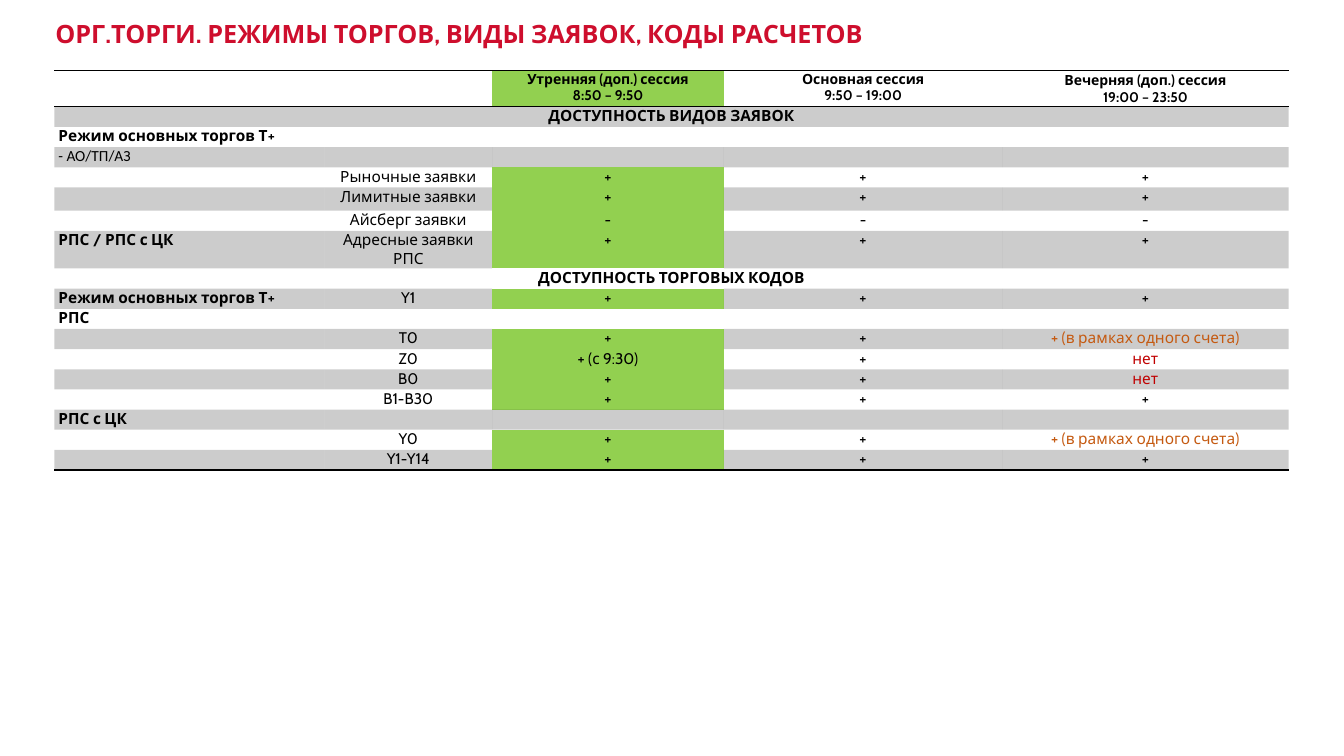
from lxml import etree
from pptx import Presentation
from pptx.dml.color import RGBColor
from pptx.enum.text import MSO_ANCHOR, MSO_AUTO_SIZE, PP_ALIGN
from pptx.oxml.ns import qn
from pptx.util import Inches, Pt

LEFT, CENTER = PP_ALIGN.LEFT, PP_ALIGN.CENTER
TOP, MIDDLE = MSO_ANCHOR.TOP, MSO_ANCHOR.MIDDLE
NO_AUTOFIT = MSO_AUTO_SIZE.NONE
TITLE_ONLY = 5
NO_STYLE = "{2D5ABB26-0587-4C30-8999-92F81FD0307C}"

BLACK = RGBColor(0x00, 0x00, 0x00)
CRIMSON = RGBColor(0xCE, 0x0E, 0x2D)
GREEN = RGBColor(0x92, 0xD0, 0x50)
ORANGE = RGBColor(0xC5, 0x5A, 0x11)
RED = RGBColor(0xC0, 0x00, 0x00)

COLUMN_WIDTHS = (2.68, 1.66, 2.3, 2.76, 2.84)
ROW_HEIGHT = 0.2
SPECIAL_HEIGHTS = {0: 0.36, 5: 0.23, 7: 0.36}
MORNING = 2
SAME_ACCOUNT = "+ (в рамках одного счета)"
TEXT_COLORS = {SAME_ACCOUNT: ORANGE, "нет": RED}
SECTIONS = ("ДОСТУПНОСТЬ ВИДОВ ЗАЯВОК", "ДОСТУПНОСТЬ ТОРГОВЫХ КОДОВ")
SUBMODE = "- АО/ТП/АЗ"
ROWS = (
    ("", "", "Утренняя (доп.) сессия\n8:50 – 9:50",
     "Основная сессия\n9:50 – 19:00", "Вечерняя (доп.) сессия\n19:00 – 23:50"),
    (SECTIONS[0], "", "", "", ""),
    ("Режим основных торгов Т+", "", "", "", ""),
    (SUBMODE, "", "", "", ""),
    ("", "Рыночные заявки", "+", "+", "+"),
    ("", "Лимитные заявки", "+", "+", "+"),
    ("", "Айсберг заявки", "-", "-", "-"),
    ("РПС / РПС с ЦК", "Адресные заявки РПС", "+", "+", "+"),
    (SECTIONS[1], "", "", "", ""),
    ("Режим основных торгов Т+", "Y1", "+", "+", "+"),
    ("РПС", "", "", "", ""),
    ("", "T0", "+", "+", SAME_ACCOUNT),
    ("", "Z0", "+ (с 9:30)", "+", "нет"),
    ("", "B0", "+", "+", "нет"),
    ("", "B1-B30", "+", "+", "+"),
    ("РПС с ЦК", "", "", "", ""),
    ("", "Y0", "+", "+", SAME_ACCOUNT),
    ("", "Y1-Y14", "+", "+", "+"),
)


def write_text(frame, text, size=11, font="Cabin", color=BLACK, bold=False, align=LEFT):
    """Write the lines of text as formatted paragraphs."""
    for index, line in enumerate(text.split("\n")):
        paragraph = frame.add_paragraph() if index else frame.paragraphs[0]
        paragraph.alignment = align
        if line:
            run = paragraph.add_run()
            run.text = line
            run.font.size, run.font.name = Pt(size), font
            run.font.bold = bold
            run.font.color.rgb = color
        else:
            etree.SubElement(paragraph._p, qn("a:endParaRPr"), sz=str(size * 100))


def add_title(slide, text):
    """Place and format the slide title."""
    title = slide.shapes.title
    title.left, title.top = Inches(0.54), Inches(0.2)
    title.width, title.height = Inches(11.93), Inches(0.28)
    frame = title.text_frame
    frame.margin_left = frame.margin_right = frame.margin_top = frame.margin_bottom = 0
    frame.vertical_anchor = TOP
    frame.auto_size = NO_AUTOFIT
    frame.word_wrap = True
    write_text(frame, text, size=18, color=CRIMSON, bold=True)
    paragraph = frame.paragraphs[0]
    paragraph.line_spacing, paragraph.space_before = Pt(20), Pt(1)
    paragraph._p.get_or_add_pPr().set("marL", str(Inches(0.01)))


def add_border(cell, side):
    """Draw a thin black line on one side of a cell."""
    properties = cell._tc.get_or_add_tcPr()
    line = etree.SubElement(properties, qn(f"a:ln{side}"), w=str(Pt(1)))
    fill = etree.SubElement(line, qn("a:solidFill"))
    etree.SubElement(fill, qn("a:srgbClr"), val=str(BLACK))


def fill_cell(cell, shaded, highlighted):
    """Give a cell the session green, the band grey or no fill."""
    if not (shaded or highlighted):
        cell.fill.background()
        return
    cell.fill.solid()
    cell.fill.fore_color.rgb = GREEN if highlighted else BLACK
    if not highlighted:
        color = cell._tc.tcPr.find(qn("a:solidFill")).find(qn("a:srgbClr"))
        etree.SubElement(color, qn("a:alpha"), val="20000")


def format_cell(cell, text, row, column):
    """Write one table cell with its borders, fill and text."""
    cell.margin_left = cell.margin_right = Inches(0.04)
    cell.margin_top = cell.margin_bottom = 0
    cell.vertical_anchor = MIDDLE if (row, column) == (0, 4) else TOP
    if row == 0:
        add_border(cell, "T")
    if row in (0, len(ROWS) - 1):
        add_border(cell, "B")
    fill_cell(cell, row % 2 == 1, column == MORNING and text != "")
    write_text(
        cell.text_frame,
        text,
        size=10 if row == 0 else 11,
        font="Calibri" if text == SUBMODE else "Cabin",
        color=TEXT_COLORS.get(text, BLACK),
        bold=row == 0 or (column == 0 and text != SUBMODE),
        align=CENTER if column or text in SECTIONS else LEFT,
    )


def add_schedule(slide):
    """Add the table of trading modes by session."""
    heights = [SPECIAL_HEIGHTS.get(row, ROW_HEIGHT) for row in range(len(ROWS))]
    shape = slide.shapes.add_table(
        len(ROWS), len(COLUMN_WIDTHS), Inches(0.54), Inches(0.7),
        Inches(sum(COLUMN_WIDTHS)), Inches(sum(heights)))
    shape._element.find(".//" + qn("a:tableStyleId")).text = NO_STYLE
    table = shape.table
    table.first_row = table.horz_banding = False
    for column, width in zip(table.columns, COLUMN_WIDTHS):
        column.width = Inches(width)
    for row, texts in enumerate(ROWS):
        table.rows[row].height = Inches(heights[row])
        for column, text in enumerate(texts):
            format_cell(table.cell(row, column), text, row, column)
        if texts[0] in SECTIONS:
            table.cell(row, 0).merge(table.cell(row, len(texts) - 1))


def main():
    """Build and save the presentation."""
    presentation = Presentation()
    presentation.slide_width, presentation.slide_height = Inches(13.33), Inches(7.5)
    slide = presentation.slides.add_slide(presentation.slide_layouts[TITLE_ONLY])
    add_title(slide, "ОРГ.ТОРГИ. РЕЖИМЫ ТОРГОВ, ВИДЫ ЗАЯВОК, КОДЫ РАСЧЕТОВ")
    add_schedule(slide)
    presentation.save("out.pptx")


if __name__ == "__main__":
    main()
